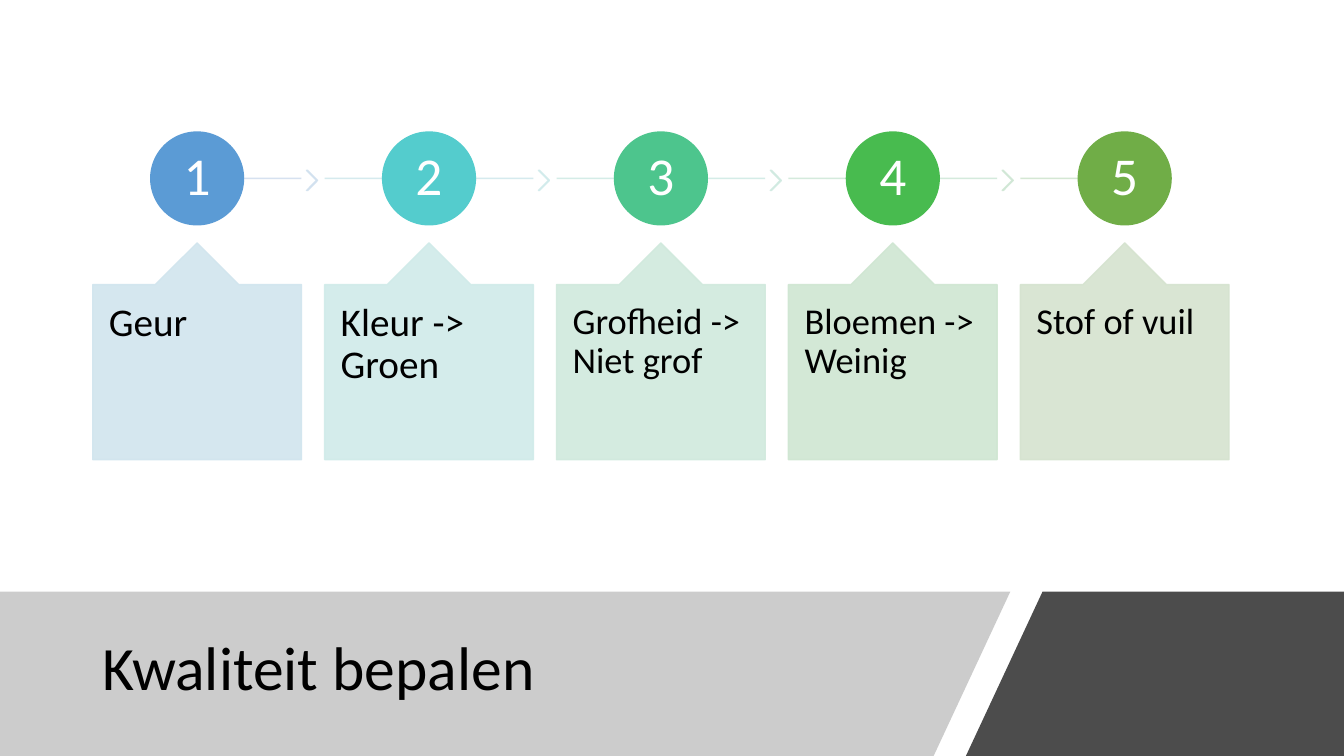
from pptx import Presentation
from pptx.dml.color import RGBColor
from pptx.enum.shapes import MSO_CONNECTOR, MSO_SHAPE
from pptx.enum.text import MSO_ANCHOR, MSO_AUTO_SIZE, PP_ALIGN
from pptx.oxml.ns import qn
from pptx.util import Inches, Pt
from lxml import etree

LEFT, CENTER = PP_ALIGN.LEFT, PP_ALIGN.CENTER
TOP, MIDDLE = MSO_ANCHOR.TOP, MSO_ANCHOR.MIDDLE
STRAIGHT = MSO_CONNECTOR.STRAIGHT
OVAL, CHEVRON, CALLOUT = MSO_SHAPE.OVAL, MSO_SHAPE.CHEVRON, MSO_SHAPE.UP_ARROW_CALLOUT
NO_AUTOFIT = MSO_AUTO_SIZE.NONE

BLACK = RGBColor(0x00, 0x00, 0x00)
WHITE = RGBColor(0xFF, 0xFF, 0xFF)
GRAY = RGBColor(0x80, 0x80, 0x80)
CIRCLE_COLORS = [RGBColor(0x5B, 0x9B, 0xD5), RGBColor(0x54, 0xCC, 0xCD),
                 RGBColor(0x4D, 0xC5, 0x8D), RGBColor(0x48, 0xBB, 0x4F),
                 RGBColor(0x70, 0xAD, 0x47)]
RAIL_COLORS = [RGBColor(0xD2, 0xDE, 0xEF), RGBColor(0xD1, 0xE8, 0xED),
               RGBColor(0xD0, 0xEA, 0xE5), RGBColor(0xD0, 0xE8, 0xD9),
               RGBColor(0xD0, 0xE5, 0xCF)]
CHEVRON_COLORS = [RGBColor(0xD1, 0xE1, 0xEF), RGBColor(0xD1, 0xEB, 0xEC),
                  RGBColor(0xD0, 0xEA, 0xE1), RGBColor(0xD0, 0xE7, 0xD5)]
BOX_COLORS = [RGBColor(0xD1, 0xE5, 0xEE), RGBColor(0xD0, 0xEB, 0xE9),
              RGBColor(0xD0, 0xE9, 0xDD), RGBColor(0xCF, 0xE6, 0xD2),
              RGBColor(0xD5, 0xE3, 0xCF)]

STEPS = [("Geur", 28), ("Kleur -> Groen", 28), ("Grofheid -> Niet grof", 26),
         ("Bloemen -> Weinig", 26), ("Stof of vuil", 26)]
BANDS = [([(0, 5.87), (10.02, 5.87), (9.26, 7.5), (0, 7.5)], GRAY, 40),
         ([(10.34, 5.87), (13.33, 5.87), (13.33, 7.5), (9.58, 7.5)], BLACK, 70)]
FIRST_LEFT, PITCH, BOX_WIDTH = 0.92, 2.3, 2.07


def set_opacity(sp, percent):
    for color in sp.element.spPr.iter(qn("a:srgbClr")):
        etree.SubElement(color, qn("a:alpha")).set("val", str(percent * 1000))


def write_text(sp, text, size, color, align, anchor, inset_x, inset_y):
    tf = sp.text_frame
    tf.word_wrap = True
    tf.auto_size = NO_AUTOFIT
    tf.vertical_anchor = anchor
    tf.margin_left = tf.margin_right = Inches(inset_x)
    tf.margin_top = tf.margin_bottom = Inches(inset_y)
    p = tf.paragraphs[0]
    p.alignment = align
    p.line_spacing = 0.9
    r = p.add_run()
    r.text = text
    r.font.name = "Calibri"
    r.font.size = Pt(size)
    r.font.color.rgb = color


prs = Presentation()
prs.slide_width = Inches(13.33)
prs.slide_height = Inches(7.5)
s = prs.slides.add_slide(prs.slide_layouts[5])

for corners, color, opacity in BANDS:
    points = [(Inches(x), Inches(y)) for x, y in corners]
    builder = s.shapes.build_freeform(*points[0])
    builder.add_line_segments(points[1:], close=True)
    band = builder.convert_to_shape()
    band.shadow.inherit = False
    band.fill.solid()
    band.fill.fore_color.rgb = color
    band.line.fill.background()
    set_opacity(band, opacity)

title = s.shapes.title
title.left, title.top = Inches(0.92), Inches(6.05)
title.width, title.height = Inches(8.44), Inches(1.2)
write_text(title, "Kwaliteit bepalen", 44, BLACK, LEFT, MIDDLE, 0.1, 0.05)
title.element.getparent().append(title.element)

last = len(STEPS) - 1
for i, (label, size) in enumerate(STEPS):
    left = FIRST_LEFT + i * PITCH
    center = left + BOX_WIDTH / 2

    rail_start = left if i > 0 else center
    rail_end = left + BOX_WIDTH if i < last else center
    rail = s.shapes.add_connector(STRAIGHT, Inches(rail_start), Inches(1.77),
                                  Inches(rail_end), Inches(1.77))
    rail.line.color.rgb = RAIL_COLORS[i]
    rail.line.width = Pt(1)
    set_opacity(rail, 90)
    etree.SubElement(rail.element.spPr, qn("a:effectLst"))

    parts = [(OVAL, center - 0.46, 1.31, 0.92, 0.92, CIRCLE_COLORS[i], 100, []),
             (CALLOUT, left, 2.41, BOX_WIDTH, 2.15, BOX_COLORS[i], 90, [0.5, 0.2, 0.2, 1])]
    if i < last:
        parts.append((CHEVRON, left + 2.12, 1.69, 0.11, 0.2, CHEVRON_COLORS[i], 90, [0.9]))
    for kind, x, y, width, height, color, opacity, adjustments in parts:
        sp = s.shapes.add_shape(kind, Inches(x), Inches(y), Inches(width), Inches(height))
        sp.shadow.inherit = False
        sp.fill.solid()
        sp.fill.fore_color.rgb = color
        sp.line.color.rgb = color
        sp.line.width = Pt(1)
        for n, value in enumerate(adjustments):
            sp.adjustments[n] = value
        if opacity < 100:
            set_opacity(sp, opacity)
        if kind == OVAL:
            write_text(sp, str(i + 1), 38, WHITE, CENTER, MIDDLE, 0.04, 0.04)
        elif kind == CALLOUT:
            write_text(sp, label, size, BLACK, LEFT, TOP, 0.16, 0.18)

prs.save("out.pptx")
